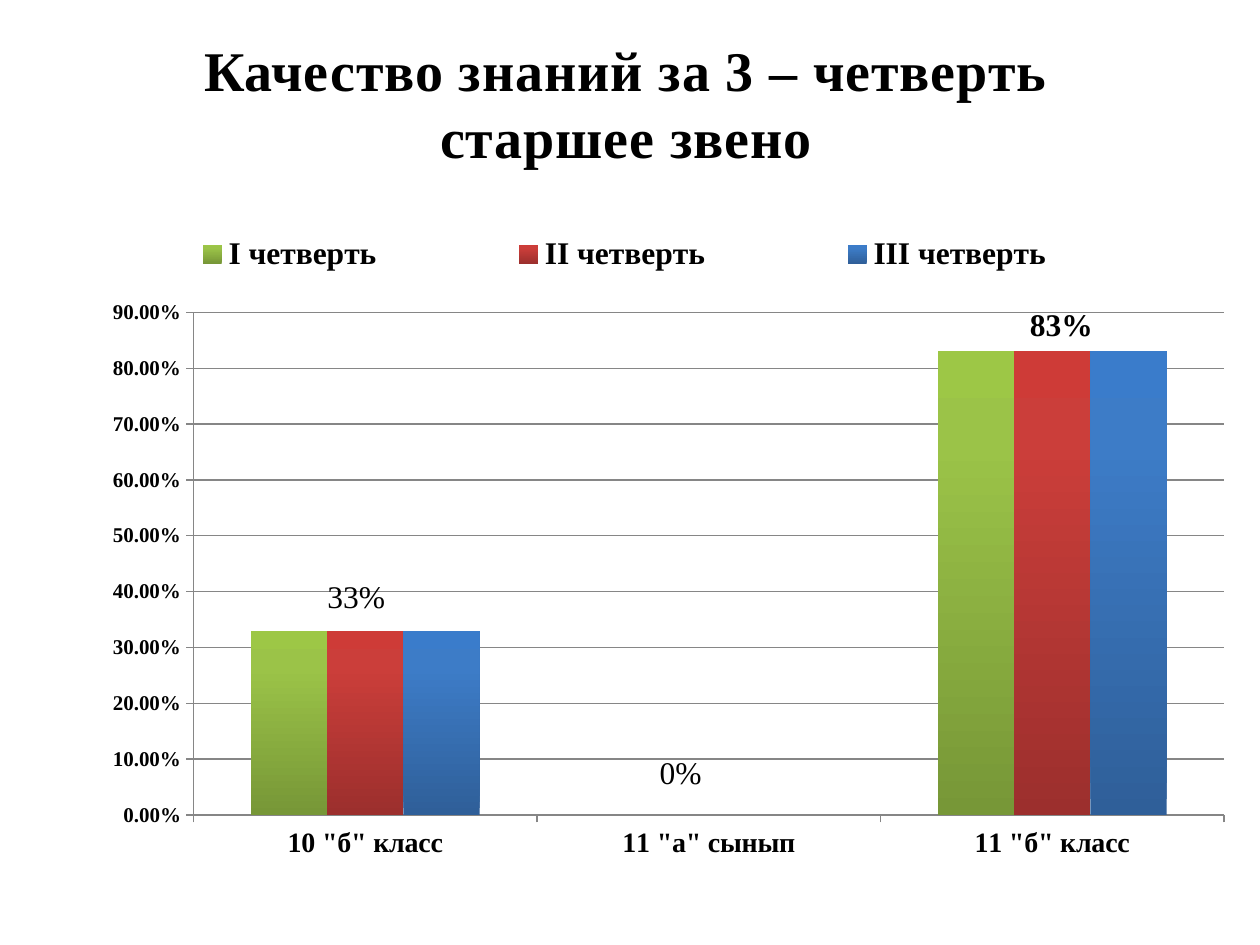
"""Build a slide with a clustered column chart of knowledge quality by quarter."""
from dataclasses import dataclass

from lxml import etree
from pptx import Presentation
from pptx.chart.chart import Chart
from pptx.chart.data import CategoryChartData
from pptx.dml.color import RGBColor
from pptx.enum.chart import XL_CHART_TYPE, XL_LABEL_POSITION, XL_LEGEND_POSITION, XL_TICK_MARK
from pptx.enum.text import MSO_ANCHOR, PP_ALIGN
from pptx.oxml import parse_xml
from pptx.oxml.ns import nsdecls, qn
from pptx.util import Inches, Pt

COLUMN = XL_CHART_TYPE.COLUMN_CLUSTERED
OUTSIDE_END = XL_LABEL_POSITION.OUTSIDE_END
LEGEND_RIGHT = XL_LEGEND_POSITION.RIGHT
TICK_OUT = XL_TICK_MARK.OUTSIDE
CENTER = PP_ALIGN.CENTER
TOP = MSO_ANCHOR.TOP

WIDTH, HEIGHT = Inches(10), Inches(7.5)
FONT = "Times New Roman"
COLORS = {"text": "000000", "line": "868686"}
CATEGORIES = ('10 "б" класс', '11 "а" сынып', '11 "б" класс')


@dataclass(frozen=True)
class Area:
    """A rectangle in percent of its container."""
    left: float
    top: float
    width: float
    height: float

    def on_page(self) -> tuple[int, int, int, int]:
        """Return the rectangle in slide units."""
        return (int(WIDTH * self.left / 100), int(HEIGHT * self.top / 100),
                int(WIDTH * self.width / 100), int(HEIGHT * self.height / 100))


@dataclass(frozen=True)
class Quarter:
    """One series with its gradient from the base of a column to its top."""
    name: str
    values: tuple[float, ...]
    gradient: tuple[str, str, str]


@dataclass(frozen=True)
class Label:
    """A label of one class, shifted in percent of the chart."""
    text: str
    right: float
    down: float
    bold: bool


TITLE_AREA = Area(2.3, 3.07, 94.8, 15.73)
CHART_AREA = Area(1.6, 19.73, 95.6, 75.33)
PLOT_AREA = Area(14.4, 17.7, 85.6, 70.6)
LEGEND_AREA = Area(4.2, 4.5, 92, 10)
QUALITY = (0.33, 0, 0.83)
QUARTERS = (
    Quarter("I четверть", QUALITY, ("779737", "9BC348", "9DC746")),
    Quarter("II четверть", QUALITY, ("9C2F2D", "CB3E3A", "CE3B37")),
    Quarter("III четверть", QUALITY, ("2F5F99", "3D7CC7", "3A7CCB")),
)
LABELS = (
    Label("33%", 5.6, -1.5, False),
    Label("0%", 4, -2.6, False),
    Label("83%", 7.1, -0.5, True),
)


def set_font(font, size: float, bold: bool) -> None:
    """Apply the slide's typeface and text colour."""
    font.name, font.size, font.bold = FONT, Pt(size), bold
    font.color.rgb = RGBColor.from_string(COLORS["text"])


def make_layout(values: dict[str, float], inner: bool = False) -> etree.ElementBase:
    """Return a manual chart layout from percentages."""
    modes = {"xMode": "edge", "yMode": "edge"} if "w" in values else {}
    target = {"layoutTarget": "inner"} if inner else {}
    shares = {name: round(value / 100, 4) for name, value in values.items()}
    parts = {**target, **modes, **shares}
    body = "".join(f'<c:{name} val="{value}"/>' for name, value in parts.items())
    return parse_xml(f'<c:layout {nsdecls("c")}><c:manualLayout>{body}</c:manualLayout></c:layout>')


def place(element, area: Area, after: str | None = None, inner: bool = False) -> None:
    """Give a chart part its place, replacing any earlier layout."""
    for old in element.findall(qn("c:layout")):
        element.remove(old)
    layout = make_layout({"x": area.left, "y": area.top, "w": area.width, "h": area.height}, inner)
    if after:
        element.find(qn(after)).addnext(layout)
    else:
        element.insert(0, layout)


def paint(series, quarter: Quarter) -> None:
    """Fill a series with its three-stop vertical gradient."""
    series.format.fill.gradient()
    fill = series.format.fill._xPr.find(qn("a:gradFill"))
    stops = "".join(f'<a:gs pos="{position * 1000}"><a:srgbClr val="{color}"/></a:gs>'
                    for position, color in zip((0, 80, 100), quarter.gradient))
    fill.getparent().replace(fill, parse_xml(
        f'<a:gradFill {nsdecls("a")} rotWithShape="1"><a:gsLst>{stops}</a:gsLst>'
        '<a:lin ang="16200000" scaled="0"/></a:gradFill>'))


def add_label(series, index: int, label: Label) -> None:
    """Write a shifted label above one column."""
    data_label = series.points[index].data_label
    span = data_label.text_frame.paragraphs[0].add_run()
    span.text = label.text
    set_font(span.font, 18, label.bold)
    data_label.position = OUTSIDE_END
    element = series._element.findall(".//" + qn("c:dLbl"))[index]
    element.find(qn("c:idx")).addnext(make_layout({"x": label.right, "y": label.down}))


def hide_leader_lines(series) -> None:
    """Turn off the lines between shifted labels and their columns."""
    for switch in series._element.iter(qn("c:showLeaderLines")):
        switch.set("val", "0")


def style_axes(chart: Chart) -> None:
    """Set scales, ticks, lines and fonts of both axes."""
    value_axis = chart.value_axis
    value_axis.minimum_scale, value_axis.maximum_scale, value_axis.major_unit = 0, 0.9, 0.1
    value_axis.tick_labels.number_format = "0.00%"
    value_axis.tick_labels.number_format_is_linked = False
    value_axis.has_major_gridlines = True
    for axis, size in ((chart.category_axis, 16), (value_axis, 12)):
        axis.major_tick_mark = TICK_OUT
        set_font(axis.tick_labels.font, size, True)
    for part in (chart.category_axis, value_axis, value_axis.major_gridlines):
        part.format.line.color.rgb = RGBColor.from_string(COLORS["line"])
        part.format.line.width = Pt(0.75)


def add_title(page, text: str) -> None:
    """Add the centred heading."""
    box = page.shapes.add_textbox(*TITLE_AREA.on_page())
    box.text_frame.word_wrap = True
    box.text_frame.vertical_anchor = TOP
    para = box.text_frame.paragraphs[0]
    para.text = text
    para.alignment = CENTER
    set_font(para.font, 32, True)
    for span in para.runs:
        span.font._element.set("spc", "50")


def add_quality_chart(page) -> None:
    """Add the column chart with its legend and labels."""
    data = CategoryChartData(number_format="0%")
    data.categories = CATEGORIES
    for quarter in QUARTERS:
        data.add_series(quarter.name, quarter.values)
    chart = page.shapes.add_chart(COLUMN, *CHART_AREA.on_page(), data).chart
    chart.has_title = False
    set_font(chart.font, 18, False)
    plot = chart.plots[0]
    plot.gap_width, plot.overlap, plot.vary_by_categories = 150, 0, False
    for series, quarter in zip(plot.series, QUARTERS):
        paint(series, quarter)
    for index, label in enumerate(LABELS):
        add_label(plot.series[0], index, label)
    hide_leader_lines(plot.series[0])
    style_axes(chart)
    chart.has_legend = True
    chart.legend.position = LEGEND_RIGHT
    chart.legend.include_in_layout = False
    set_font(chart.legend.font, 18, True)
    place(chart.legend._element, LEGEND_AREA, after="c:legendPos")
    place(chart._chartSpace.chart.plotArea, PLOT_AREA, inner=True)


def main() -> None:
    """Build and save the deck."""
    deck = Presentation()
    deck.slide_width, deck.slide_height = WIDTH, HEIGHT
    page = deck.slides.add_slide(deck.slide_layouts[6])
    add_title(page, "Качество знаний за 3 – четверть\vстаршее звено")
    add_quality_chart(page)
    deck.save("out.pptx")


if __name__ == "__main__":
    main()
